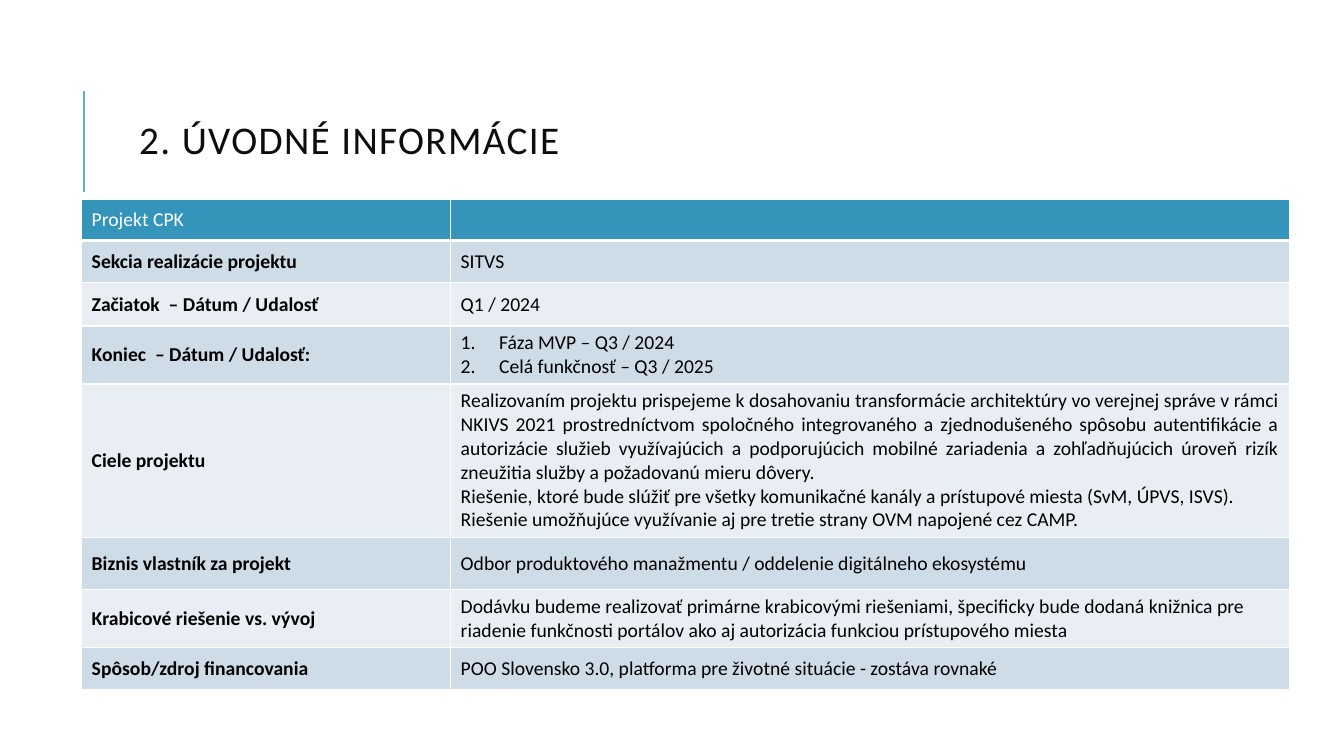
from lxml.etree import SubElement
from pptx import Presentation
from pptx.dml.color import RGBColor
from pptx.enum.shapes import MSO_CONNECTOR
from pptx.enum.text import MSO_ANCHOR, MSO_AUTO_SIZE, PP_ALIGN
from pptx.oxml.ns import qn
from pptx.util import Inches, Pt

FONT = "Calibri"
HEADER_FILL = "3494BA"
BAND_FILLS = ("CEDCE7", "E8EEF3")
COLUMN_WIDTHS = (3.66, 8.32)
PROJECT_ROWS = [
    (0.4, "Projekt CPK", []),
    (0.42, "Sekcia realizácie projektu", ["SITVS"]),
    (0.43, "Začiatok  – Dátum / Udalosť", ["Q1 / 2024"]),
    (0.57, "Koniec  – Dátum / Udalosť:", ["Fáza MVP – Q3 / 2024", "Celá funkčnosť – Q3 / 2025"]),
    (1.5, "Ciele projektu", [
        "Realizovaním projektu prispejeme k dosahovaniu transformácie architektúry vo verejnej "
        "správe v rámci NKIVS 2021 prostredníctvom spoločného integrovaného a zjednodušeného "
        "spôsobu autentifikácie a autorizácie služieb využívajúcich a podporujúcich mobilné "
        "zariadenia a zohľadňujúcich úroveň rizík zneužitia služby a požadovanú mieru dôvery.",
        "Riešenie, ktoré bude slúžiť pre všetky komunikačné kanály a prístupové miesta "
        "(SvM, ÚPVS, ISVS).",
        "Riešenie umožňujúce využívanie aj pre tretie strany OVM napojené cez CAMP.",
    ]),
    (0.52, "Biznis vlastník za projekt",
     ["Odbor produktového manažmentu / oddelenie digitálneho ekosystému"]),
    (0.57, "Krabicové riešenie vs. vývoj", [
        "Dodávku budeme realizovať primárne krabicovými riešeniami, špecificky bude dodaná "
        "knižnica pre riadenie funkčnosti portálov ako aj autorizácia funkciou prístupového miesta",
    ]),
    (0.42, "Spôsob/zdroj financovania",
     ["POO Slovensko 3.0, platforma pre životné situácie - zostáva rovnaké"]),
]
NUMBERED_ROW, JUSTIFIED_ROW = 3, 4


def color(value):
    """Turn a hex string into a colour."""
    return RGBColor.from_string(value)


def write(para, text, size=14, fill="000000", bold=False, spacing=0):
    """Add one formatted span to a paragraph."""
    span = para.add_run()
    span.text = text
    span.font.name = FONT
    span.font.size = Pt(size)
    span.font.bold = bold
    span.font.color.rgb = color(fill)
    if spacing:
        span.font._element.set("spc", str(spacing * 100))


def number_paragraph(para):
    """Give a paragraph automatic numbering with a hanging indent."""
    properties = para._p.get_or_add_pPr()
    properties.set("marL", str(Inches(0.38)))
    properties.set("indent", str(-Inches(0.38)))
    SubElement(properties, qn("a:buFont"), typeface="+mj-lt")
    SubElement(properties, qn("a:buAutoNum"), type="arabicPeriod")


def style_cell(cell, fill, top=1, bottom=1):
    """Set the white borders, fill and anchor of a cell."""
    properties = cell._tc.get_or_add_tcPr()
    for side, width in (("L", 1), ("R", 1), ("T", top), ("B", bottom)):
        line = SubElement(properties, qn(f"a:ln{side}"), w=str(Pt(width)))
        solid = SubElement(line, qn("a:solidFill"))
        SubElement(solid, qn("a:srgbClr"), val="FFFFFF")
    cell.fill.solid()
    cell.fill.fore_color.rgb = color(fill)
    cell.vertical_anchor = MSO_ANCHOR.MIDDLE


def add_heading(page, left, top, height, text):
    """Place the title beside its vertical accent line."""
    accent = page.shapes.add_connector(
        MSO_CONNECTOR.STRAIGHT, Inches(left), Inches(top + height), Inches(left), Inches(top))
    accent.line.color.rgb = color("58B6C0")
    accent.line.width = Pt(1.5)
    SubElement(accent._element.spPr, qn("a:effectLst"))
    title = page.shapes.title
    title.left, title.top = Inches(left + 0.55), Inches(top + 0.11)
    title.width, title.height = Inches(10), Inches(0.82)
    frame = title.text_frame
    frame.margin_left = frame.margin_right = frame.margin_top = frame.margin_bottom = 0
    frame.word_wrap = True
    frame.auto_size = MSO_AUTO_SIZE.NONE
    frame.vertical_anchor = MSO_ANCHOR.MIDDLE
    para = frame.paragraphs[0]
    para.alignment = PP_ALIGN.LEFT
    para.line_spacing = 0.8
    write(para, text, size=28, fill="0D0D0D", spacing=1)


def add_project_table(page, left, top):
    """Build the table of project details."""
    width, height = sum(COLUMN_WIDTHS), sum(row[0] for row in PROJECT_ROWS)
    table = page.shapes.add_table(
        len(PROJECT_ROWS), len(COLUMN_WIDTHS),
        Inches(left), Inches(top), Inches(width), Inches(height)).table
    for column, column_width in zip(table.columns, COLUMN_WIDTHS):
        column.width = Inches(column_width)
    for index, (row_height, label, details) in enumerate(PROJECT_ROWS):
        table.rows[index].height = Inches(row_height)
        header = index == 0
        fill = HEADER_FILL if header else BAND_FILLS[(index - 1) % 2]
        label_cell, detail_cell = table.cell(index, 0), table.cell(index, 1)
        for cell in (label_cell, detail_cell):
            style_cell(cell, fill, top=3 if index == 1 else 1, bottom=3 if header else 1)
        write(label_cell.text_frame.paragraphs[0], label,
              fill="FFFFFF" if header else "000000", bold=not header)
        frame = detail_cell.text_frame
        for position, text in enumerate(details):
            para = frame.add_paragraph() if position else frame.paragraphs[0]
            if index == NUMBERED_ROW:
                number_paragraph(para)
            if index == JUSTIFIED_ROW:
                para.alignment = PP_ALIGN.JUSTIFY
            write(para, text)


def main():
    """Create the deck and save it."""
    deck = Presentation()
    deck.slide_width, deck.slide_height = Inches(13.33), Inches(7.5)
    page = deck.slides.add_slide(deck.slide_layouts[5])
    add_heading(page, 0.83, 0.9, 1, "2. ÚVODNÉ INFORMÁCIE")
    add_project_table(page, 0.81, 1.98)
    deck.save("out.pptx")


if __name__ == "__main__":
    main()
